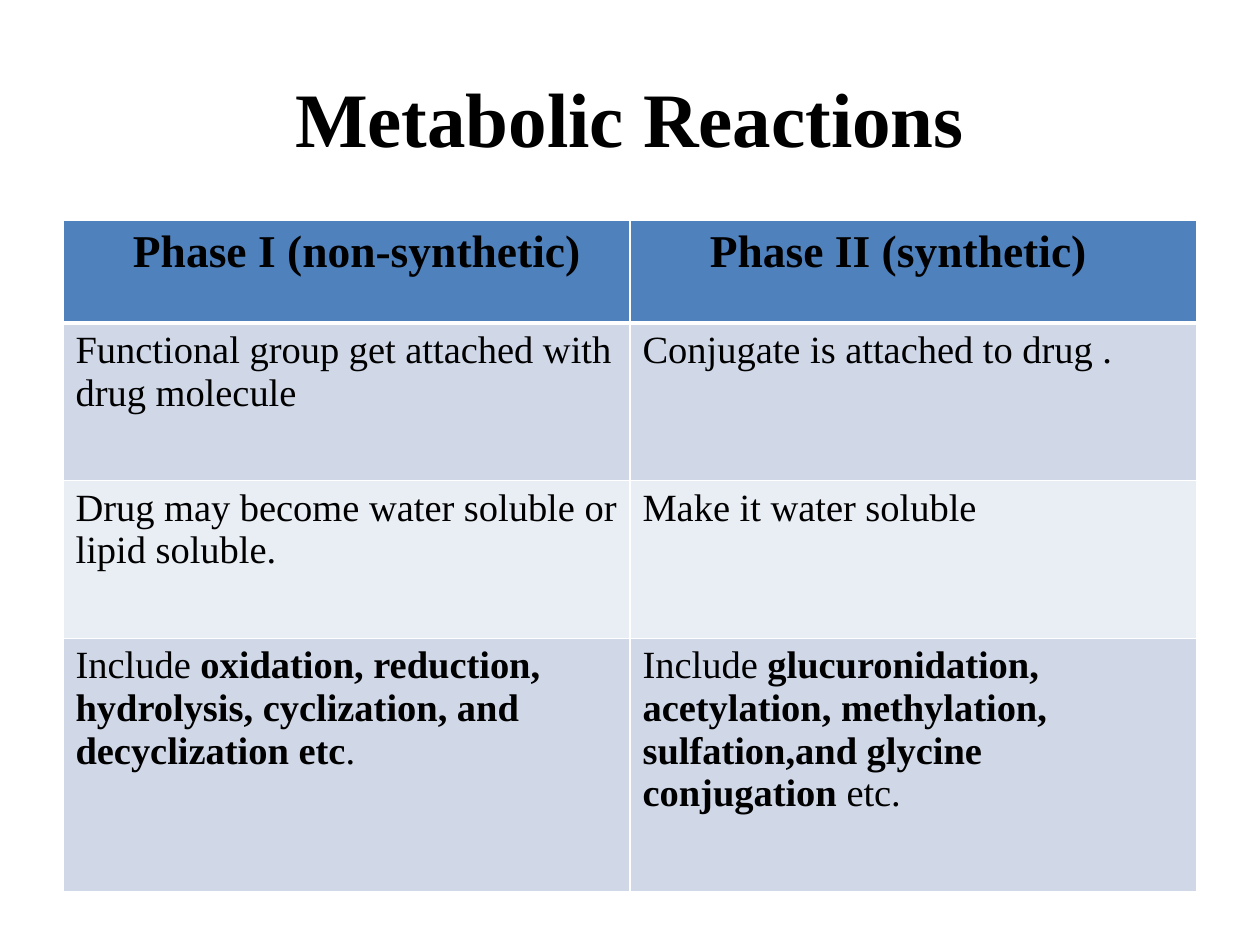
from lxml import etree
from pptx import Presentation
from pptx import util as u
from pptx.dml.color import RGBColor
from pptx.enum import text
from pptx.oxml.ns import qn

FONT = "Times New Roman"
COLORS = {"text": "000000", "border": "FFFFFF", "header": "4F81BD",
          "band": "D0D8E8", "light": "E9EDF4"}

HEADERS = ["Phase I (non-synthetic)", "Phase II (synthetic)"]
HEADER_INDENTS = [1.41, 1.61]
# Each cell is a list of runs; every second run is bold.
ROWS = [
    [["Functional group get attached with drug molecule"],
     ["Conjugate is attached to drug ."]],
    [["Drug may become water soluble or lipid soluble."],
     ["Make it water soluble"]],
    [["Include ", "oxidation, reduction, hydrolysis, cyclization, and "
      "decyclization etc", "."],
     ["Include ", "glucuronidation, acetylation, methylation, "
      "sulfation,and glycine conjugation ", "etc."]],
]
ROW_HEIGHTS = [2.06, 3.18, 3.18, 5.11]


def color(name):
    return RGBColor.from_string(COLORS[name])


class SlideBuilder:
    def __init__(self, slide):
        self.s = slide

    def runs(self, p, parts, size, bold=False):
        """Add the parts as runs, swapping bold on and off from one to the next."""
        for i, part in enumerate(parts):
            r = p.add_run()
            r.text = part
            r.font.name = FONT
            r.font.size = u.Pt(size)
            r.font.bold = bold != (i % 2 == 1)
            r.font.color.rgb = color("text")

    def title(self, words, left, top, width, height):
        sp = self.s.shapes.add_textbox(*map(u.Cm, (left, top, width, height)))
        tf = sp.text_frame
        tf.word_wrap = True
        tf.vertical_anchor = text.MSO_ANCHOR.MIDDLE
        p = tf.paragraphs[0]
        p.alignment = text.PP_ALIGN.CENTER
        self.runs(p, [words], 44, bold=True)

    def cell(self, cell, parts, fill, size, bold=False, bottom=1, top=1):
        self.runs(cell.text_frame.paragraphs[0], parts, size, bold)
        cell.fill.solid()
        cell.fill.fore_color.rgb = color(fill)
        self.borders(cell, {"lnL": 1, "lnR": 1, "lnT": top, "lnB": bottom})

    def borders(self, cell, widths):
        """Put the border lines before the fill, as the schema requires."""
        tcPr = cell._tc.get_or_add_tcPr()
        for i, (side, width) in enumerate(widths.items()):
            ln = etree.Element(qn(f"a:{side}"), w=str(u.Pt(width)))
            fill = etree.SubElement(ln, qn("a:solidFill"))
            etree.SubElement(fill, qn("a:srgbClr"), val=COLORS["border"])
            tcPr.insert(i, ln)

    def table(self, left, top, width):
        frame = self.s.shapes.add_table(
            len(ROWS) + 1, len(HEADERS), u.Cm(left), u.Cm(top),
            u.Cm(width), u.Cm(sum(ROW_HEIGHTS)))
        tbl = frame.table
        for row, height in zip(tbl.rows, ROW_HEIGHTS):
            row.height = u.Cm(height)
        for c, (header, indent) in enumerate(zip(HEADERS, HEADER_INDENTS)):
            cell = tbl.cell(0, c)
            cell.margin_left = u.Cm(indent)
            self.cell(cell, [header], "header", 26, bold=True, bottom=3)
        for i, row in enumerate(ROWS, start=1):
            for c, parts in enumerate(row):
                self.cell(tbl.cell(i, c), parts, "band" if i % 2 else "light",
                          22, top=3 if i == 1 else 1)


def main():
    prs = Presentation()
    prs.slide_width, prs.slide_height = u.Cm(25.4), u.Cm(19.05)
    builder = SlideBuilder(prs.slides.add_slide(prs.slide_layouts[6]))
    builder.title("Metabolic Reactions", 1.27, 0.76, 22.86, 3.18)
    builder.table(1.27, 4.45, 22.86)
    prs.save("out.pptx")


if __name__ == "__main__":
    main()
